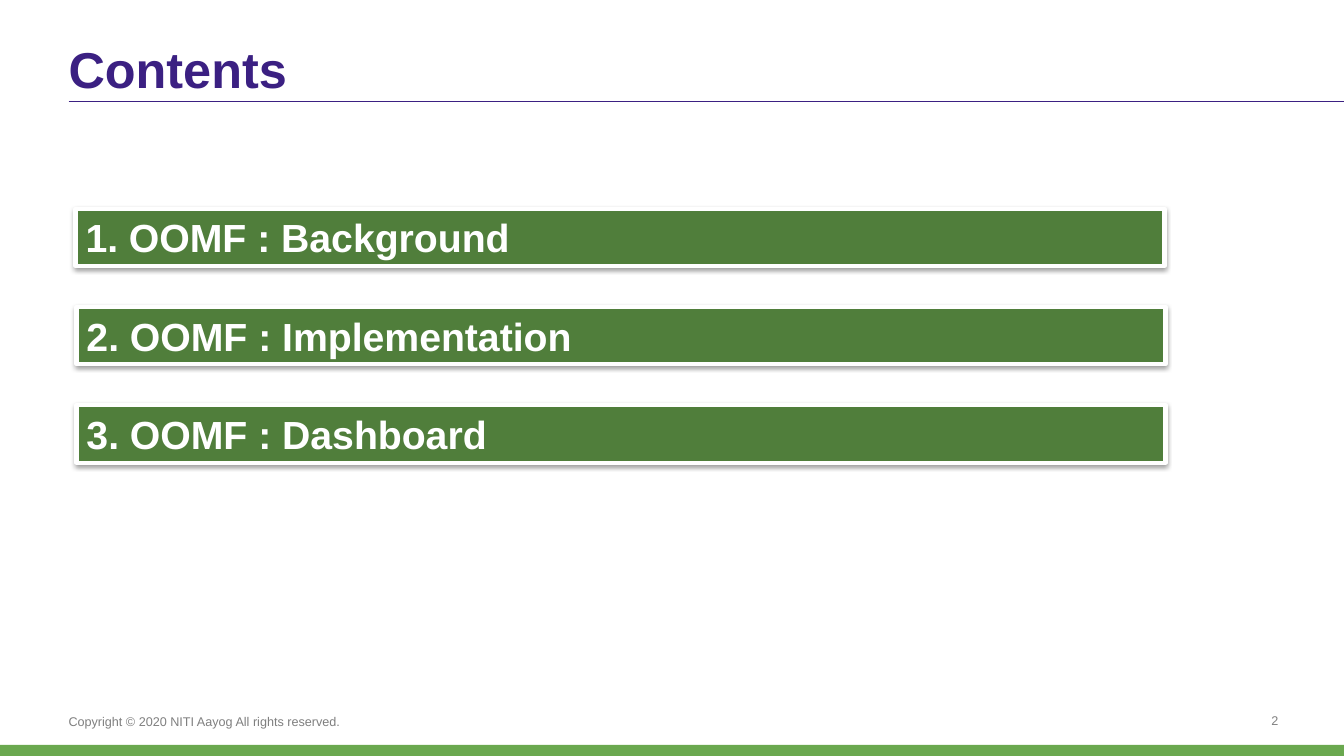
"""Build the contents slide with three agenda bars."""
from lxml.etree import SubElement
from pptx import Presentation
from pptx.dml.color import RGBColor
from pptx.enum.shapes import MSO_CONNECTOR as Connector, MSO_SHAPE as Shape
from pptx.enum.text import MSO_ANCHOR as Anchor, PP_ALIGN as Align
from pptx.oxml.ns import qn
from pptx.util import Inches, Pt

WIDTH, HEIGHT = 13.33, 7.5
MARGIN = 0.68
BAR_LEFT, BAR_TOP, BAR_PITCH = 0.76, 2.07, 0.975
BAR_WIDTH, BAR_HEIGHT = 10.8, 0.57
COLORS = {
    "purple": "3B2082",
    "bar": "507E3B",
    "strip": "6AA84F",
    "footer": "7F7F7F",
    "number": "808080",
    "white": "FFFFFF",
    "shadow": "000000",
}
TOPICS = ("Background", "Implementation", "Dashboard")


def color(name):
    return RGBColor.from_string(COLORS[name])


def write(frame, text, size, tint, bold=False, align=Align.LEFT):
    frame.word_wrap = True
    paragraph = frame.paragraphs[0]
    paragraph.alignment = align
    run = paragraph.add_run()
    run.text = text
    run.font.name = "Arial"
    run.font.size = Pt(size)
    run.font.bold = bold
    run.font.color.rgb = color(tint)


def add_label(slide, box, text, size, tint, **style):
    frame = slide.shapes.add_textbox(*map(Inches, box)).text_frame
    frame.margin_left = frame.margin_top = 0
    frame.margin_right = frame.margin_bottom = 0
    frame.vertical_anchor = Anchor.BOTTOM
    write(frame, text, size, tint, **style)


def add_block(slide, box, fill):
    block = slide.shapes.add_shape(Shape.RECTANGLE, *map(Inches, box))
    block.shadow.inherit = False
    block.fill.solid()
    block.fill.fore_color.rgb = color(fill)
    block.line.fill.background()
    return block


def cast_shadow(block):
    effects = block.element.spPr.find(qn("a:effectLst"))
    shadow = SubElement(effects, qn("a:outerShdw"), blurRad="40000",
                        dist="20000", dir="5400000", rotWithShape="0")
    tint = SubElement(shadow, qn("a:srgbClr"), val=COLORS["shadow"])
    SubElement(tint, qn("a:alpha"), val="38000")


def add_topic(slide, row, topic):
    top = BAR_TOP + row * BAR_PITCH
    left = BAR_LEFT if row else BAR_LEFT - 0.01
    bar = add_block(slide, (left, top, BAR_WIDTH, BAR_HEIGHT), "bar")
    bar.line.color.rgb = color("white")
    bar.line.width = Pt(3)
    cast_shadow(bar)
    bar.text_frame.vertical_anchor = Anchor.TOP
    write(bar.text_frame, f"{row + 1}. OOMF : {topic}", 28, "white", bold=True)


def add_rule(slide, y):
    rule = slide.shapes.add_connector(
        Connector.STRAIGHT, *map(Inches, (MARGIN, y, WIDTH, y)))
    rule.line.color.rgb = color("purple")
    rule.line.width = Pt(1)
    SubElement(rule.element.spPr, qn("a:effectLst"))


def main():
    deck = Presentation()
    deck.slide_width, deck.slide_height = Inches(WIDTH), Inches(HEIGHT)
    slide = deck.slides.add_slide(deck.slide_layouts[6])
    add_rule(slide, 1.01)
    add_label(slide, (MARGIN, 0.12, 11.99, 0.86), "Contents", 36, "purple",
              bold=True)
    for row, topic in enumerate(TOPICS):
        add_topic(slide, row, topic)
    add_label(slide, (MARGIN, 7.07, 4.22, 0.16),
              "Copyright © 2020 NITI Aayog All rights reserved.", 9, "footer")
    add_label(slide, (11.54, 7.03, 1.14, 0.19), "2", 9, "number",
              align=Align.RIGHT)
    add_block(slide, (0, 7.39, WIDTH, 0.11), "strip")
    deck.save("out.pptx")


if __name__ == "__main__":
    main()
